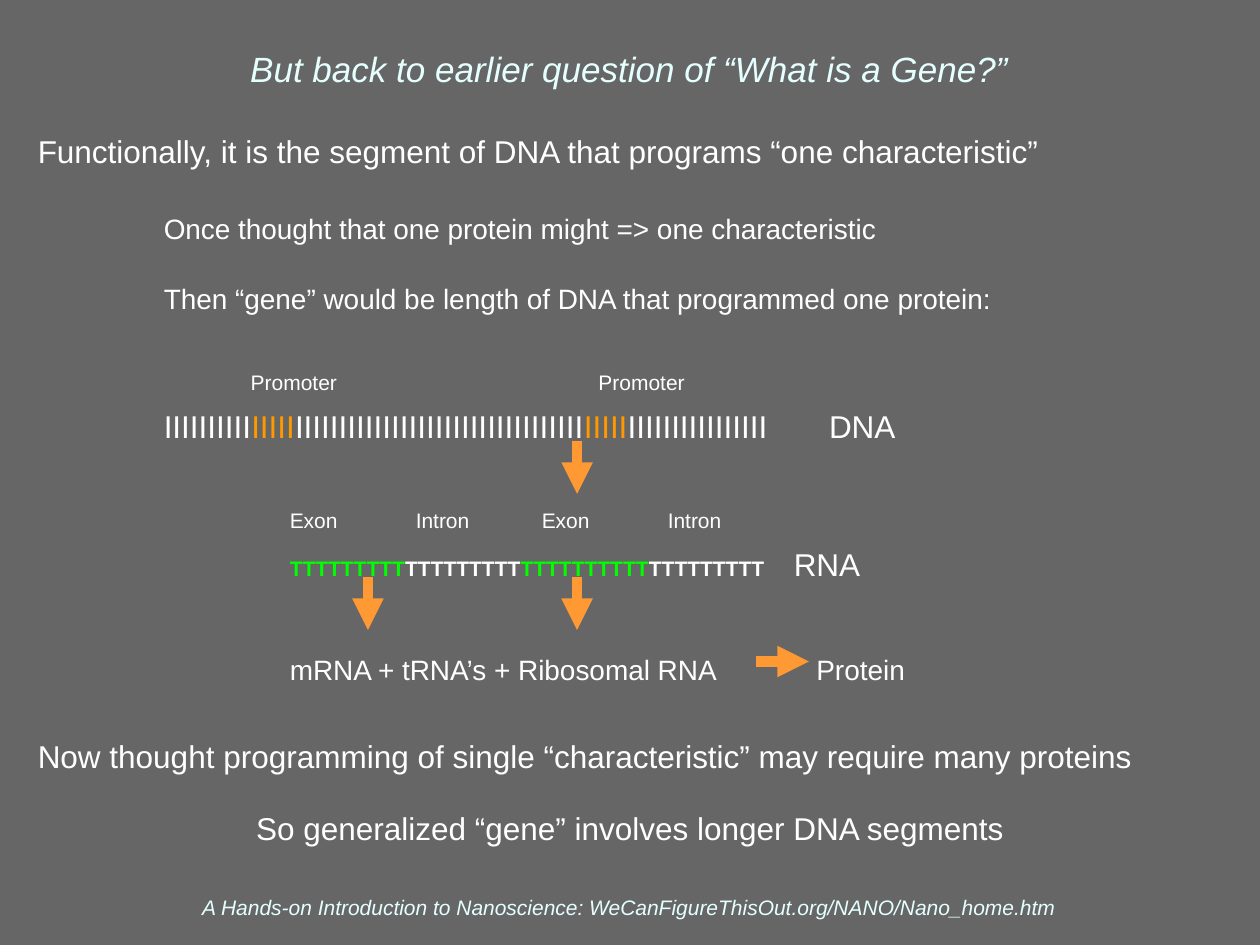
from lxml.etree import SubElement
from pptx import Presentation
from pptx.dml.color import RGBColor
from pptx.enum.shapes import MSO_CONNECTOR
from pptx.enum.text import MSO_ANCHOR, PP_ALIGN
from pptx.oxml.ns import qn
from pptx.util import Inches, Pt

COLORS = {
    "background": "666666",
    "heading": "E5FFFF",
    "text": "FFFFFF",
    "promoter": "FF9900",
    "exon": "00FF00",
    "arrow": "FF9933",
}

# Text, size, space before, tab stops in inches
OPENING = [
    ("Functionally, it is the segment of DNA that programs “one characteristic”", 18, 0, []),
    ("\tOnce thought that one protein might => one characteristic", 16, 23.5, [1]),
    ("\tThen “gene” would be length of DNA that programmed one protein:", 16, 21, [1]),
    ("\tPromoter\tPromoter", 12, 31, [1.69, 4.45]),
]
DNA_STRAND = [("I" * 10, "text"), ("I" * 5, "promoter"), ("I" * 33, "text"),
              ("I" * 5, "promoter"), ("I" * 16, "text")]
RNA_STRAND = [("T" * 9, "exon"), ("T" * 9, "text"), ("T" * 10, "exon"), ("T" * 9, "text")]

DOWN, RIGHT = (0, 0.42), (0.42, 0)
ARROWS = [(4.58, 3.5, DOWN), (4.58, 4.58, DOWN), (6, 5.25, RIGHT), (2.92, 4.58, DOWN)]


def color(name):
    return RGBColor.from_string(COLORS[name])


def set_font(font, size, color_name, italic=False):
    font.name = "Arial"
    font.size = Pt(size)
    font.bold = False
    font.italic = italic
    font.color.rgb = color(color_name)


def set_frame(shape, anchor):
    frame = shape.text_frame
    frame.word_wrap = True
    frame.vertical_anchor = anchor
    frame.margin_left = frame.margin_right = Inches(0.05)
    frame.margin_top = frame.margin_bottom = Inches(0.05)
    return frame


def add_text_box(slide, left, top, width, height, anchor=MSO_ANCHOR.TOP):
    box = slide.shapes.add_textbox(Inches(left), Inches(top), Inches(width), Inches(height))
    return set_frame(box, anchor)


def write_heading(frame, text, size):
    """Fill a frame with one centred italic line."""
    line = frame.paragraphs[0]
    line.text = text
    line.alignment = PP_ALIGN.CENTER
    set_font(line.font, size, "heading", italic=True)


def add_line(frame, text, size, space_before, stops=(), align=PP_ALIGN.LEFT):
    first = frame.paragraphs[0]
    line = frame.add_paragraph() if first.runs else first
    line.text = text
    line.alignment = align
    line.space_before = Pt(space_before)
    if stops:
        tabs = SubElement(line._p.get_or_add_pPr(), qn("a:tabLst"))
        for stop in stops:
            SubElement(tabs, qn("a:tab"), pos=str(Inches(stop)), algn="l")
    set_font(line.font, size, "text")
    return line


def add_strand(frame, segments, name, size, bold, stops):
    """Add a line of coloured segments that ends with the strand's name."""
    line = add_line(frame, "\t", 18, 7, stops)
    for letters, color_name in segments:
        run = line.add_run()
        run.text = letters
        run.font.size = Pt(size)
        run.font.bold = bold
        run.font.color.rgb = color(color_name)
    line.add_run().text = "\t" + name


def add_arrow(slide, left, top, step):
    across, down = step
    arrow = slide.shapes.add_connector(
        MSO_CONNECTOR.STRAIGHT, Inches(left), Inches(top),
        Inches(left + across), Inches(top + down))
    arrow.line.color.rgb = color("arrow")
    arrow.line.width = Pt(6)
    SubElement(arrow.line._get_or_add_ln(), qn("a:tailEnd"), type="triangle")
    SubElement(arrow._element.spPr, qn("a:effectLst"))


def main():
    deck = Presentation()
    deck.slide_width, deck.slide_height = Inches(10), Inches(7.5)
    slide = deck.slides.add_slide(deck.slide_layouts[5])
    slide.background.fill.solid()
    slide.background.fill.fore_color.rgb = color("background")

    footer = add_text_box(slide, 0.33, 7.06, 9.33, 0.29, MSO_ANCHOR.BOTTOM)
    write_heading(
        footer, "A Hands-on Introduction to Nanoscience: WeCanFigureThisOut.org/NANO/Nano_home.htm", 12)

    title = slide.shapes.title
    title.left, title.top = Inches(0.33), Inches(0.08)
    title.width, title.height = Inches(9.33), Inches(0.92)
    write_heading(set_frame(title, MSO_ANCHOR.MIDDLE),
                  "But back to earlier question of “What is a Gene?”", 20)

    body = add_text_box(slide, 0.25, 1, 9.5, 6.17)
    for text, size, space_before, stops in OPENING:
        add_line(body, text, size, space_before, stops)
    add_strand(body, DNA_STRAND, "DNA", 18, False, [1, 6.28])
    add_line(body, "\tExon\tIntron\tExon\tIntron", 12, 36, [2, 3, 4, 5])
    add_strand(body, RNA_STRAND, "RNA", 12, True, [2, 6])
    add_line(body, "\tmRNA + tRNA’s + Ribosomal RNA\tProtein", 16, 40, [2, 6.18])
    add_line(body, "Now thought programming of single “characteristic” may require many proteins", 18, 29)
    add_line(body, "So generalized “gene” involves longer DNA segments", 18, 19.5,
             align=PP_ALIGN.CENTER)

    for left, top, step in ARROWS:
        add_arrow(slide, left, top, step)
    deck.save("out.pptx")


if __name__ == "__main__":
    main()
